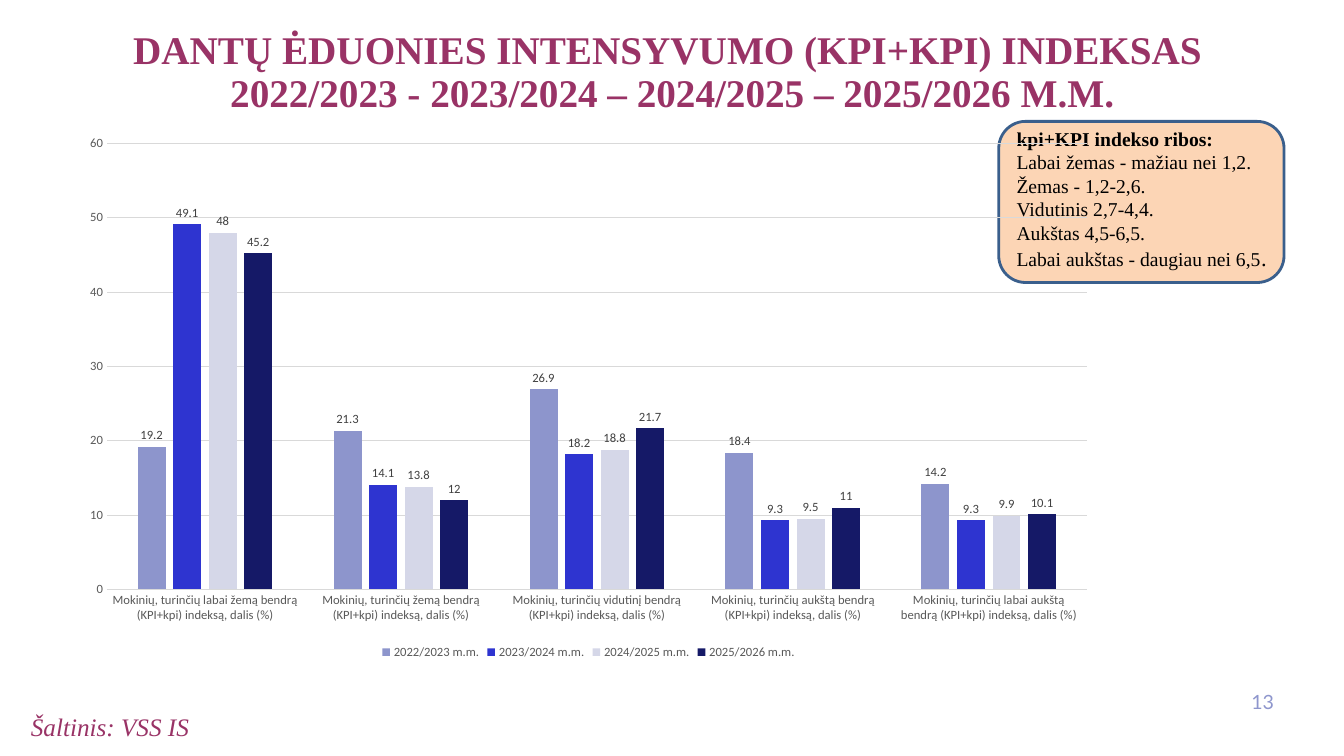
from lxml.etree import SubElement
from pptx import Presentation
from pptx.chart.data import CategoryChartData
from pptx.dml.color import RGBColor
from pptx.enum.chart import XL_CHART_TYPE, XL_LABEL_POSITION, XL_LEGEND_POSITION, XL_TICK_MARK
from pptx.enum.shapes import MSO_SHAPE
from pptx.enum.text import MSO_ANCHOR, PP_ALIGN
from pptx.oxml.ns import qn
from pptx.util import Cm, Pt

TITLE = ("DANTŲ ĖDUONIES INTENSYVUMO (KPI+KPI) INDEKSAS \v"
         "2022/2023 - 2023/2024 – 2024/2025 – 2025/2026 M.M.")
SOURCE = "Šaltinis: VSS IS"
PAGE = "13"
LIMITS = [
    "kpi+KPI indekso ribos:",
    "Labai žemas - mažiau nei 1,2.",
    "Žemas - 1,2-2,6.",
    "Vidutinis 2,7-4,4.",
    "Aukštas 4,5-6,5.",
    "Labai aukštas - daugiau nei 6,5",
]
LEVELS = ["labai žemą", "žemą", "vidutinį", "aukštą", "labai aukštą"]
SERIES = [
    ("2022/2023 m.m.", "lilac", (19.2, 21.3, 26.9, 18.4, 14.2)),
    ("2023/2024 m.m.", "blue", (49.1, 14.1, 18.2, 9.3, 9.3)),
    ("2024/2025 m.m.", "pale", (48, 13.8, 18.8, 9.5, 9.9)),
    ("2025/2026 m.m.", "navy", (45.2, 12, 21.7, 11, 10.1)),
]
COLORS = {
    "plum": "993366", "page": "8E96CD", "black": "000000",
    "peach": "FCD5B5", "border": "3A5F8C",
    "lilac": "8D95CC", "blue": "2E34D0", "pale": "D5D7E8", "navy": "151967",
    "axis": "595959", "label": "404040", "grid": "D9D9D9",
}
SERIF = "Times New Roman"


def color(name):
    return RGBColor.from_string(COLORS[name])


def style(font, size, name, face=SERIF, bold=False, italic=False):
    font.size, font.name = Pt(size), face
    font.bold, font.italic = bold, italic
    font.color.rgb = color(name)


def add_text(slide, box, text, align, anchor=MSO_ANCHOR.TOP, **font):
    tf = slide.shapes.add_textbox(*map(Cm, box)).text_frame
    tf.word_wrap = True
    tf.vertical_anchor = anchor
    p = tf.paragraphs[0]
    p.text = text
    p.alignment = align
    for r in p.runs:
        style(r.font, **font)
    return p


def add_limits(slide):
    sp = slide.shapes.add_shape(MSO_SHAPE.ROUNDED_RECTANGLE,
                                Cm(25.17), Cm(3.06), Cm(7.19), Cm(4.06))
    sp.shadow.inherit = False
    sp.fill.solid()
    sp.fill.fore_color.rgb = color("peach")
    sp.line.color.rgb = color("border")
    sp.line.width = Pt(2)
    tf = sp.text_frame
    tf.word_wrap = True
    tf.vertical_anchor = MSO_ANCHOR.MIDDLE
    tf.margin_right, tf.margin_bottom = 0, Cm(0.28)
    tf.text = "\n".join(LIMITS)
    for i, p in enumerate(tf.paragraphs):
        p.alignment = PP_ALIGN.LEFT
        style(p.runs[0].font, 14, "black", bold=i == 0)
    r = tf.paragraphs[-1].add_run()
    r.text = "."
    style(r.font, 16, "black")


def add_index_chart(slide):
    data = CategoryChartData()
    data.categories = [f"Mokinių, turinčių {level} bendrą (KPI+kpi) indeksą, dalis (%)"
                       for level in LEVELS]
    for name, _, values in SERIES:
        data.add_series(name, values)
    chart = slide.shapes.add_chart(XL_CHART_TYPE.COLUMN_CLUSTERED, Cm(1.75), Cm(3.16),
                                   Cm(26.16), Cm(13.56), data).chart
    chart.has_title = False
    style(chart.font, 10, "black", "Calibri")

    plot = chart.plots[0]
    plot.gap_width, plot.overlap = 219, -27
    plot.vary_by_categories = False
    for series, (_, fill, _) in zip(plot.series, SERIES):
        series.format.fill.solid()
        series.format.fill.fore_color.rgb = color(fill)
        labels = series.data_labels
        labels.show_value = True
        labels.position = XL_LABEL_POSITION.OUTSIDE_END
        style(labels.font, 9, "label", "Calibri")

    cat, val = chart.category_axis, chart.value_axis
    for axis in (cat, val):
        axis.major_tick_mark = axis.minor_tick_mark = XL_TICK_MARK.NONE
        style(axis.tick_labels.font, 9, "axis", "Calibri")
    val.minimum_scale, val.maximum_scale, val.major_unit = 0, 60, 10
    val.has_major_gridlines = True
    val.format.line.fill.background()
    for line in (cat.format.line, val.major_gridlines.format.line):
        line.color.rgb = color("grid")
        line.width = Pt(0.75)

    chart.has_legend = True
    chart.legend.position = XL_LEGEND_POSITION.BOTTOM
    chart.legend.include_in_layout = False
    style(chart.legend.font, 9, "axis", "Calibri")

    # Clear chart background keeps the limits box visible beneath the gridlines
    space = chart.element
    props = space.makeelement(qn("c:spPr"))
    SubElement(props, qn("a:noFill"))
    SubElement(SubElement(props, qn("a:ln")), qn("a:noFill"))
    space.find(qn("c:chart")).addnext(props)


def main():
    prs = Presentation()
    prs.slide_width, prs.slide_height = Cm(33.87), Cm(19.05)
    slide = prs.slides.add_slide(prs.slide_layouts[6])
    title = add_text(slide, (0.53, 1.47, 32.82, 1.57), TITLE, PP_ALIGN.CENTER,
                     MSO_ANCHOR.BOTTOM, size=28, name="plum", bold=True)
    title.line_spacing = 0.9
    add_text(slide, (0.53, 17.8, 16, 0.97), SOURCE, PP_ALIGN.LEFT,
             size=18, name="plum", italic=True)
    add_text(slide, (31.04, 17.17, 1.32, 1.02), PAGE, PP_ALIGN.RIGHT,
             MSO_ANCHOR.MIDDLE, size=14, name="page", face="Lato")
    add_limits(slide)
    add_index_chart(slide)
    prs.save("out.pptx")


if __name__ == "__main__":
    main()
